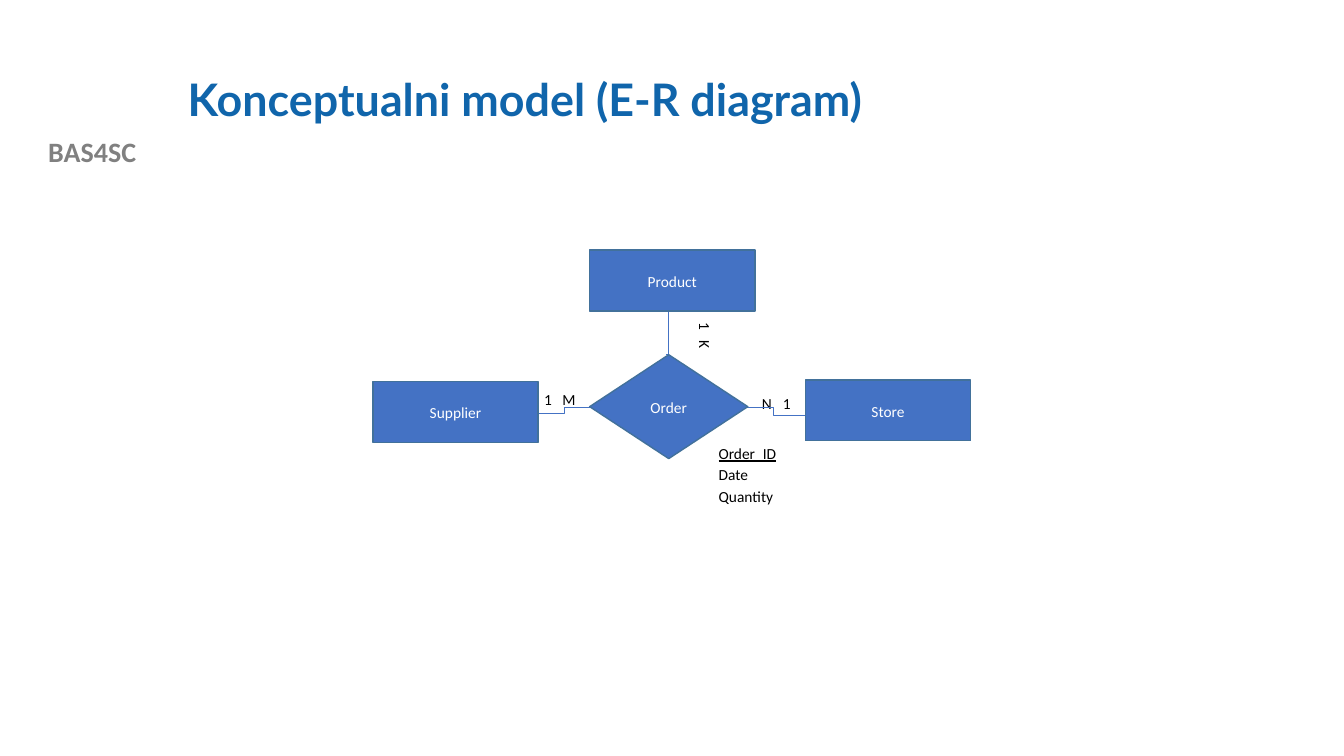
from lxml import etree
from pptx import Presentation
from pptx.dml.color import RGBColor
from pptx.enum import shapes as kinds, text as txt
from pptx.oxml.ns import qn
from pptx.util import Pt

COLORS = {
    "title": "1065AB", "course": "808080", "node": "4472C4", "edge": "42719B",
    "paper": "FFFFFF", "ink": "000000",
}
NODE_SIZE = (118, 43.4)
PROCESS = kinds.MSO_SHAPE.FLOWCHART_PROCESS
DECISION = kinds.MSO_SHAPE.FLOWCHART_DECISION


def color(name):
    return RGBColor.from_string(COLORS[name])


def style(paragraph, size, ink, face="Calibri", bold=False, spacing=1.0):
    paragraph.line_spacing = spacing
    font = paragraph.font
    font.name, font.size, font.bold = face, Pt(size), bold
    font.color.rgb = color(ink)


def add_heading(slide, words, box, size, ink, face, align):
    heading = slide.shapes.add_textbox(*map(Pt, box))
    frame = heading.text_frame
    frame.word_wrap = True
    frame.vertical_anchor = txt.MSO_ANCHOR.MIDDLE
    paragraph = frame.paragraphs[0]
    paragraph.text = words
    paragraph.alignment = align
    style(paragraph, size, ink, face, bold=True, spacing=0.9)


def add_filled(slide, kind, box, fill):
    shape = slide.shapes.add_shape(kind, *map(Pt, box))
    shape.shadow.inherit = False
    shape.fill.solid()
    shape.fill.fore_color.rgb = color(fill)
    return shape


def add_node(slide, words, kind, left, top, size=NODE_SIZE):
    node = add_filled(slide, kind, (left, top, *size), "node")
    node.line.color.rgb = color("edge")
    node.line.width = Pt(1)
    node.text_frame.vertical_anchor = txt.MSO_ANCHOR.MIDDLE
    paragraph = node.text_frame.paragraphs[0]
    paragraph.text = words
    paragraph.alignment = txt.PP_ALIGN.CENTER
    style(paragraph, 11, "paper", spacing=1.07)


def add_label(slide, lines, box, tab=None, rotation=0):
    """White box with one paragraph per line; tab sets the column of a second mark."""
    label = add_filled(slide, kinds.MSO_SHAPE.RECTANGLE, box, "paper")
    label.line.fill.background()
    label.rotation = rotation
    frame = label.text_frame
    frame.vertical_anchor = txt.MSO_ANCHOR.TOP
    frame.text = "\n".join(lines)
    for paragraph in frame.paragraphs:
        paragraph.alignment = txt.PP_ALIGN.LEFT
        if tab:
            stops = etree.SubElement(paragraph._p.get_or_add_pPr(), qn("a:tabLst"))
            etree.SubElement(stops, qn("a:tab"), pos=str(Pt(tab)), algn="l")
        style(paragraph, 11, "ink", spacing=1.15)
    return label


def add_relation(slide, start, end):
    relation = slide.shapes.add_connector(
        kinds.MSO_CONNECTOR.ELBOW, *map(Pt, (*start, *end)))
    relation.line.color.rgb = color("node")
    relation.line.width = Pt(0.5)
    etree.SubElement(relation._element.spPr, qn("a:effectLst"))


def main():
    deck = Presentation()
    deck.slide_width, deck.slide_height = Pt(960), Pt(540)
    slide = deck.slides.add_slide(deck.slide_layouts[6])

    add_heading(slide, "BAS4SC", (0, 94, 131.8, 31), 20, "course", "Calibri",
                txt.PP_ALIGN.CENTER)
    add_heading(slide, "Konceptualni model (E-R diagram)", (127, 28.8, 767.5, 87.8),
                32, "title", "Lato", txt.PP_ALIGN.LEFT)

    add_label(slide, ["1\tM"], (381.6, 272.9, 40.3, 22.3), tab=13)
    add_label(slide, ["N\t1"], (537.1, 275.8, 38.2, 22.3), tab=15)
    add_label(slide, ["1\tK"], (486.7, 231.1, 36.7, 21.6), tab=12.5, rotation=90)
    attributes = add_label(slide, ["Order_ID", "Date", "Quantity"],
                           (506.2, 311.8, 67, 49.7))
    attributes.text_frame.paragraphs[0].font.underline = True

    add_relation(slide, (383.8, 295.5), (422.6, 290.7))
    add_relation(slide, (528.5, 290.7), (576, 296.5))
    add_relation(slide, (479.5, 221.8), (475.9, 253.4))

    add_node(slide, "Product", PROCESS, 421.2, 178.6)
    add_node(slide, "Supplier", PROCESS, 266.4, 272.7)
    add_node(slide, "Store", PROCESS, 575.3, 271.3)
    add_node(slide, "Order", DECISION, 421.2, 253.4, (113, 74.2))

    deck.save("out.pptx")


if __name__ == "__main__":
    main()
